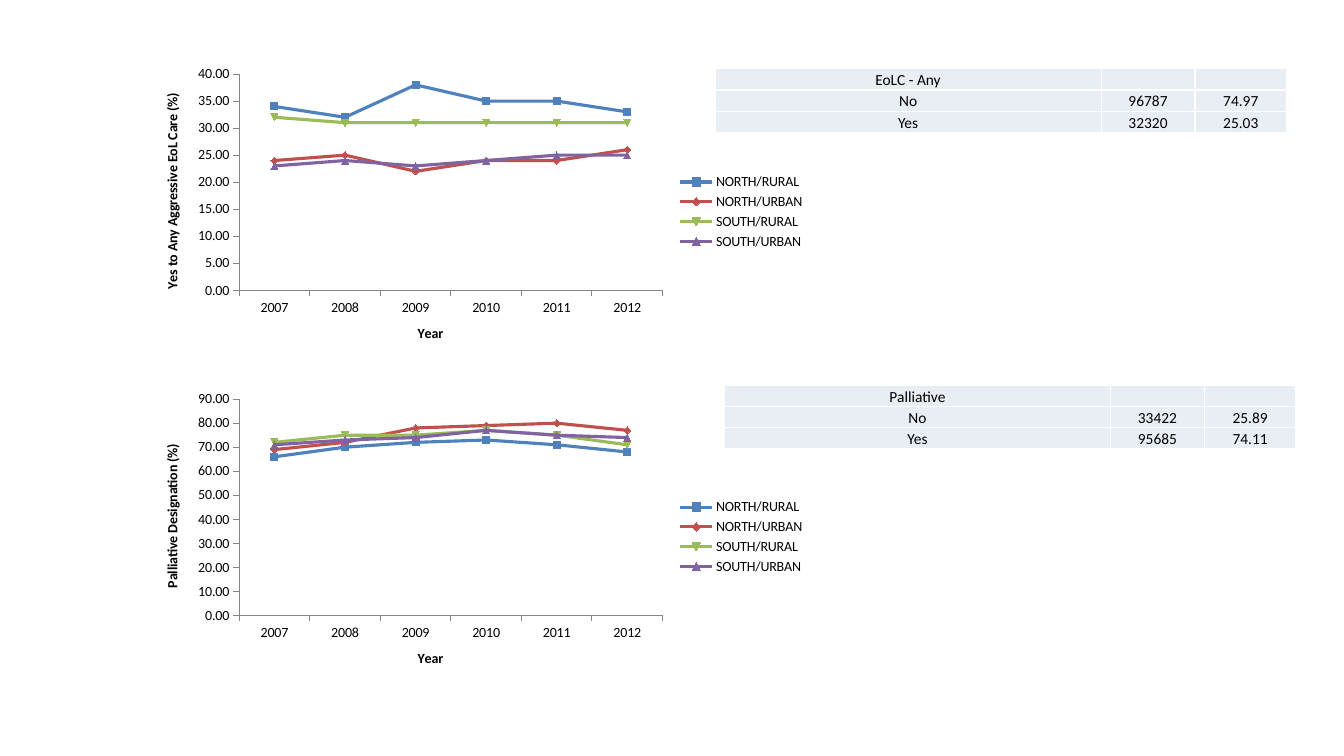
import pptx
import pptx.chart.data
import pptx.dml.color
import pptx.enum.chart
import pptx.enum.text
import pptx.oxml
import pptx.oxml.ns
import pptx.util
from lxml import etree

YEARS = ["2007", "2008", "2009", "2010", "2011", "2012"]
REGIONS = ["NORTH/RURAL", "NORTH/URBAN", "SOUTH/RURAL", "SOUTH/URBAN"]
PANELS = [
    {
        "title": "Yes to Any Aggressive EoL Care (%)", "max": 40, "step": 5,
        "rates": [[34, 32, 38, 35, 35, 33], [24, 25, 22, 24, 24, 26],
                  [32, 31, 31, 31, 31, 31], [23, 24, 23, 24, 25, 25]],
        "counts": [["EoLC - Any", "", ""], ["No", "96787", "74.97"],
                   ["Yes", "32320", "25.03"]],
        "chart_top": 0.08, "table_at": (0.532, 0.091),
    },
    {
        "title": "Palliative Designation (%)", "max": 90, "step": 10,
        "rates": [[66, 70, 72, 73, 71, 68], [69, 72, 78, 79, 80, 77],
                  [72, 75, 75, 77, 75, 71], [71, 73, 74, 77, 75, 74]],
        "counts": [["Palliative", "", ""], ["No", "33422", "25.89"],
                   ["Yes", "95685", "74.11"]],
        "chart_top": 0.51, "table_at": (0.539, 0.51),
    },
]
COLORS = {
    "NORTH/RURAL": "4F81BD", "NORTH/URBAN": "C0504D",
    "SOUTH/RURAL": "9BBB59", "SOUTH/URBAN": "8064A2",
    "text": "000000", "axis": "868686", "cell": "E9EDF4", "border": "FFFFFF",
}
FONT = "Calibri"
WIDE, HIGH = pptx.util.Inches(13.33), pptx.util.Inches(7.5)
CHART_LEFT, CHART_SIZE = 0.1065, (0.5, 0.4)
PLOT = {"x": 0.143, "y": 0.045, "w": 0.63, "h": 0.715}
COLS, ROW = (3.83, 0.93, 0.91), 0.21
TABLE_PT = 11


def rgb(name):
    return pptx.dml.color.RGBColor.from_string(COLORS[name])


def style(font, size, bold=False):
    font.name, font.size, font.bold = FONT, pptx.util.Pt(size), bold
    font.color.rgb = rgb("text")


def set_axis(axis, title):
    axis.has_major_gridlines = False
    axis.major_tick_mark = pptx.enum.chart.XL_TICK_MARK.OUTSIDE
    axis.minor_tick_mark = pptx.enum.chart.XL_TICK_MARK.NONE
    axis.format.line.color.rgb = rgb("axis")
    axis.format.line.width = pptx.util.Pt(0.75)
    style(axis.tick_labels.font, 10)
    frame = axis.axis_title.text_frame
    frame.text = title
    style(frame.paragraphs[0].runs[0].font, 10, True)


def fix_plot(chart):
    """Pin the inner plot area to its shares of the chart frame."""
    area = chart.element.find(".//" + pptx.oxml.ns.qn("c:plotArea"))
    for old in area.findall(pptx.oxml.ns.qn("c:layout")):
        area.remove(old)
    layout = etree.Element(pptx.oxml.ns.qn("c:layout"))
    manual = etree.SubElement(layout, pptx.oxml.ns.qn("c:manualLayout"))
    parts = [("layoutTarget", "inner"), ("xMode", "edge"), ("yMode", "edge")]
    for tag, val in parts + list(PLOT.items()):
        etree.SubElement(manual, pptx.oxml.ns.qn("c:" + tag), val=str(val))
    area.insert(0, layout)


def add_rates(slide, panel):
    data = pptx.chart.data.CategoryChartData(number_format="0.00")
    data.categories = YEARS
    for region, rates in zip(REGIONS, panel["rates"]):
        data.add_series(region, rates)
    chart = slide.shapes.add_chart(
        pptx.enum.chart.XL_CHART_TYPE.LINE_MARKERS,
        int(WIDE * CHART_LEFT), int(HIGH * panel["chart_top"]),
        int(WIDE * CHART_SIZE[0]), int(HIGH * CHART_SIZE[1]), data).chart
    chart.has_title = False
    style(chart.font, 10)
    chart.has_legend = True
    chart.legend.position = pptx.enum.chart.XL_LEGEND_POSITION.RIGHT
    chart.legend.include_in_layout = False
    style(chart.legend.font, 10)
    set_axis(chart.category_axis, "Year")
    axis = chart.value_axis
    set_axis(axis, panel["title"])
    axis.minimum_scale, axis.maximum_scale = 0, panel["max"]
    axis.major_unit = panel["step"]
    axis.tick_labels.number_format = "0.00"
    axis.tick_labels.number_format_is_linked = False
    chart.plots[0].vary_by_categories = False
    for series in chart.plots[0].series:
        series.smooth = False
        series.format.line.width = pptx.util.Pt(2.25)
        series.format.line.color.rgb = rgb(series.name)
        mark = series.marker.format
        mark.fill.solid()
        mark.fill.fore_color.rgb = rgb(series.name)
        mark.line.color.rgb = rgb(series.name)
    fix_plot(chart)


def set_cell(cell, text):
    cell.margin_left = cell.margin_right = cell.margin_top = pptx.util.Inches(0.01)
    cell.margin_bottom = 0
    cell.vertical_anchor = pptx.enum.text.MSO_ANCHOR.BOTTOM
    cell.fill.solid()
    cell.fill.fore_color.rgb = rgb("cell")
    para = cell.text_frame.paragraphs[0]
    para.alignment = pptx.enum.text.PP_ALIGN.CENTER
    if text:
        para.text = text
        style(para.runs[0].font, TABLE_PT)
    else:
        etree.SubElement(para._p, pptx.oxml.ns.qn("a:endParaRPr"),
                         sz=str(TABLE_PT * 100))
    props = cell._tc.get_or_add_tcPr()
    for spot, side in enumerate("LRTB"):
        props.insert(spot, pptx.oxml.parse_xml(
            f'<a:ln{side} {pptx.oxml.ns.nsdecls("a")} w="12700"><a:solidFill>'
            f'<a:srgbClr val="{COLORS["border"]}"/></a:solidFill></a:ln{side}>'))


def add_counts(slide, panel):
    rows = panel["counts"]
    left, top = panel["table_at"]
    table = slide.shapes.add_table(
        len(rows), len(COLS), int(WIDE * left), int(HIGH * top),
        pptx.util.Inches(sum(COLS)), pptx.util.Inches(ROW * len(rows))).table
    table.first_row = table.horz_banding = False
    for col, width in zip(table.columns, COLS):
        col.width = pptx.util.Inches(width)
    for row, texts in zip(table.rows, rows):
        row.height = pptx.util.Inches(ROW)
        for cell, text in zip(row.cells, texts):
            set_cell(cell, text)


def main():
    deck = pptx.Presentation()
    deck.slide_width, deck.slide_height = WIDE, HIGH
    slide = deck.slides.add_slide(deck.slide_layouts[6])
    for add in (add_rates, add_counts):
        for panel in PANELS:
            add(slide, panel)
    deck.save("out.pptx")


if __name__ == "__main__":
    main()
